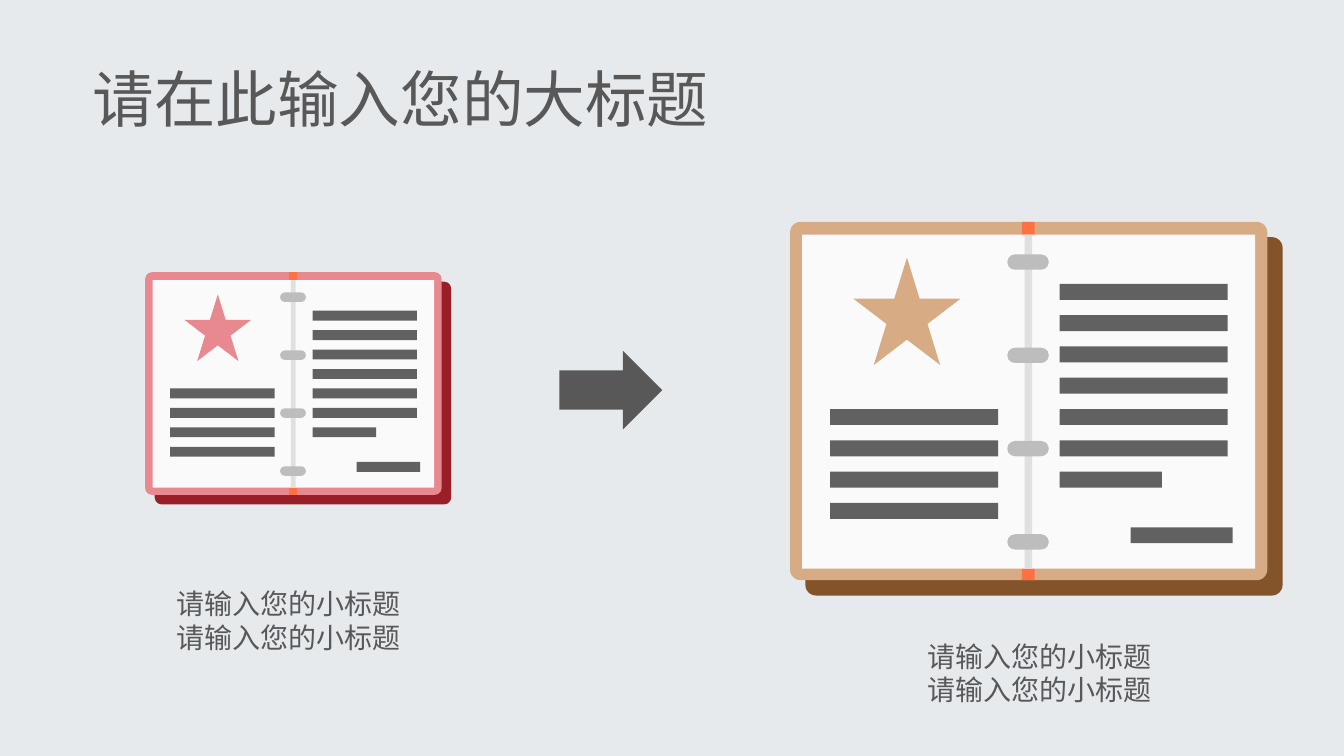
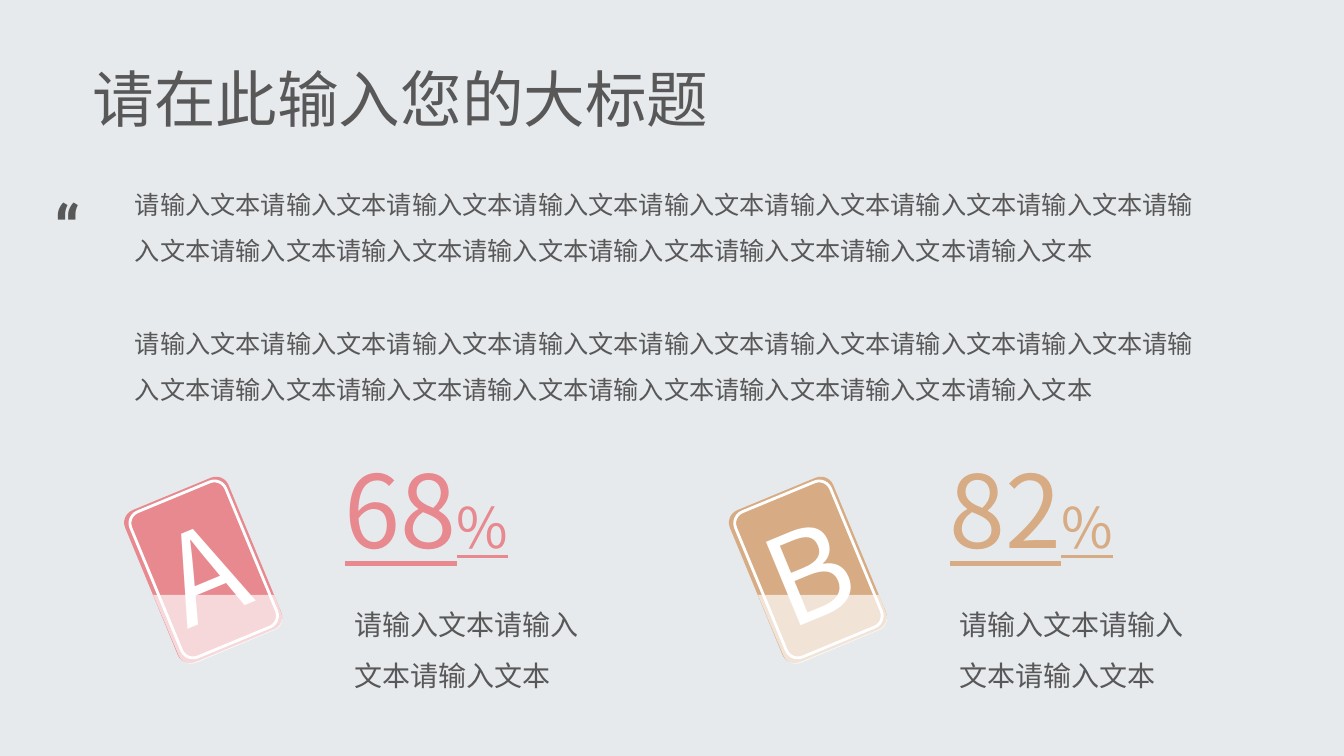
from dataclasses import dataclass

from lxml import etree
from pptx import Presentation
from pptx.dml.color import RGBColor
from pptx.enum.shapes import MSO_SHAPE
from pptx.enum.text import MSO_ANCHOR, MSO_AUTO_SIZE, PP_ALIGN
from pptx.oxml.ns import qn
from pptx.util import Cm, Pt

RECT, ROUNDED = MSO_SHAPE.RECTANGLE, MSO_SHAPE.ROUNDED_RECTANGLE
STAR, ARROW = MSO_SHAPE.STAR_5_POINT, MSO_SHAPE.RIGHT_ARROW
TOP, MIDDLE, BOTTOM = MSO_ANCHOR.TOP, MSO_ANCHOR.MIDDLE, MSO_ANCHOR.BOTTOM
LEFT, CENTER = PP_ALIGN.LEFT, PP_ALIGN.CENTER
NO_FIT = MSO_AUTO_SIZE.NONE
TITLE_ONLY = 5


@dataclass(frozen=True)
class Theme:
    background: str = "E7EAED"
    ink: str = "585858"
    white: str = "FFFFFF"
    rose: str = "E8888F"
    dark_red: str = "9A1E27"
    tan: str = "D7AB83"
    brown: str = "83542A"
    ribbon: str = "FF7043"
    paper: str = "FAFAFA"
    fold: str = "E0E0E0"
    ring: str = "BDBDBD"
    line: str = "616161"
    font: str = "Noto Sans CJK SC"
    letter_font: str = "Noto Sans CJK KR"
    quote_font: str = "Roboto Condensed"
    title_size: int = 44
    body_size: int = 18
    caption_size: int = 20
    quote_size: int = 48
    letter_size: int = 88
    figure_size: int = 72
    percent_size: int = 40


THEME = Theme()

TITLE = "请在此输入您的大标题"
TITLE_BOX = (2.08, 0.46, 29.67, 3.1)
SUBTITLE = "请输入您的小标题"
PHRASE = "请输入文本"

NOTEBOOKS = [
    dict(origin=(3.66, 6.86), scale=1, cover=THEME.rose, back=THEME.dark_red,
         caption=(1.57, 14.02, 11.4, 3.23)),
    dict(origin=(19.91, 5.59), scale=1.61, cover=THEME.tan, back=THEME.brown,
         caption=(20.5, 15.34, 11.4, 3.23)),
]
GROWTH_ARROW = (14.1, 8.84, 2.59, 1.98)

COVER_SIZE = (7.47, 5.61)
RING_TOP, RING_STEP, RING_COUNT = 0.51, 1.46, 4
LINE_TOP, LINE_STEP, LINE_HEIGHT = 0.97, 0.49, 0.25
LONG_LINE, SHORT_LINE = 2.63, 1.6
LEFT_PAGE, RIGHT_PAGE = 0.63, 4.22
WRITTEN_LINES = (
    [(LEFT_PAGE, row, LONG_LINE) for row in range(4, 8)]
    + [(RIGHT_PAGE, row, LONG_LINE) for row in range(6)]
    + [(RIGHT_PAGE, 6, SHORT_LINE)]
)
SIGNATURE = (5.33, 4.78, SHORT_LINE, LINE_HEIGHT)

QUOTE_BOX = (1.12, 4.6, 1.78, 2.31)
PARAGRAPH_BOXES = [(3.15, top, 27.56, 2.74) for top in (4.17, 7.67)]
CARDS = [("A", "68", THEME.rose), ("B", "82", THEME.tan)]
CARD_STEP = 15.24
CARD_TILT = 337.5
CARD_ROUNDING = 0.12
GLAZE_START = (3.86, 14.99)
GLAZE_CORNERS = [
    [(7.09, 15.44), (7.16, 15.62), (7.09, 15.82), (6.91, 15.88)],
    [(4.93, 16.71), (4.78, 16.76), (4.57, 16.69), (4.5, 16.51)],
]
GLAZE_RIGHT = (6.91, 14.99)
GLAZE_OPACITY = 68


def write(frame, paragraphs, size=THEME.caption_size, color=THEME.ink,
          font=THEME.font, align=LEFT, anchor=TOP, spacing=1.0, bold=False,
          underline=False, wrap=True, margin=None):
    frame.word_wrap = wrap
    frame.auto_size = NO_FIT
    frame.vertical_anchor = anchor
    if margin is not None:
        frame.margin_left = frame.margin_right = Cm(margin)
        frame.margin_top = frame.margin_bottom = Cm(margin)
    for index, pieces in enumerate(paragraphs):
        paragraph = frame.add_paragraph() if index else frame.paragraphs[0]
        paragraph.alignment = align
        paragraph.line_spacing = spacing
        for piece in [pieces] if isinstance(pieces, str) else pieces:
            words, points = (piece, size) if isinstance(piece, str) else piece
            run = paragraph.add_run()
            run.text = words
            run.font.size = Pt(points)
            run.font.bold = bold
            run.font.underline = underline
            run.font.color.rgb = RGBColor.from_string(color)
            run.font.name = font
            east_asian = etree.SubElement(run.font._element, qn("a:ea"))
            east_asian.set("typeface", font)


def add_text(slide, box, paragraphs, **text_format):
    label = slide.shapes.add_textbox(*map(Cm, box))
    write(label.text_frame, paragraphs, **text_format)


def paint(shape, fill=None, outline=None, width=2):
    shape.shadow.inherit = False
    if fill:
        shape.fill.solid()
        shape.fill.fore_color.rgb = RGBColor.from_string(fill)
    else:
        shape.fill.background()
    if outline:
        shape.line.color.rgb = RGBColor.from_string(outline)
        shape.line.width = Pt(width)
    else:
        shape.line.fill.background()
    return shape


def add_figure(shapes, preset, box, fill=None, outline=None, rounding=None, tilt=0):
    figure = paint(shapes.add_shape(preset, *map(Cm, box)), fill, outline)
    figure.rotation = tilt
    if rounding is not None:
        figure.adjustments[0] = rounding
    return figure


def add_titled_slide(deck):
    slide = deck.slides.add_slide(deck.slide_layouts[TITLE_ONLY])
    title = slide.shapes.title
    title.left, title.top, title.width, title.height = map(Cm, TITLE_BOX)
    write(title.text_frame, [TITLE], size=THEME.title_size, anchor=BOTTOM, spacing=0.9)
    return slide


def add_notebook(slide, origin, scale, cover, back, caption):
    group = slide.shapes.add_group_shape()

    def part(preset, box, fill, rounding=None):
        left, top, width, height = (value * scale for value in box)
        placed = (origin[0] + left, origin[1] + top, width, height)
        add_figure(group.shapes, preset, placed, fill, rounding=rounding)

    part(ROUNDED, (0.24, 0.24, *COVER_SIZE), back, 0.03)
    part(ROUNDED, (0, 0, *COVER_SIZE), cover, 0.03)
    part(RECT, (3.63, 0, 0.2, COVER_SIZE[1]), THEME.ribbon)
    part(RECT, (0.19, 0.2, 7.09, 5.23), THEME.paper)
    part(RECT, (3.67, 0.2, 0.12, 5.23), THEME.fold)
    for ring in range(RING_COUNT):
        part(ROUNDED, (3.4, RING_TOP + ring * RING_STEP, 0.65, 0.24), THEME.ring, 0.5)
    for left, row, width in WRITTEN_LINES:
        part(RECT, (left, LINE_TOP + row * LINE_STEP, width, LINE_HEIGHT), THEME.line)
    part(STAR, (0.99, 0.56, 1.68, 1.68), cover)
    part(RECT, SIGNATURE, THEME.line)
    add_text(slide, caption, [SUBTITLE] * 2, align=CENTER, anchor=MIDDLE)


def curve(a, b, c, d, steps=6):
    for step in range(steps + 1):
        t = step / steps
        weights = ((1 - t) ** 3, 3 * t * (1 - t) ** 2, 3 * t * t * (1 - t), t ** 3)
        yield tuple(sum(w * p[axis] for w, p in zip(weights, (a, b, c, d)))
                    for axis in (0, 1))


def add_glaze(slide, shift):
    outline = [GLAZE_RIGHT]
    for corner in GLAZE_CORNERS:
        outline.extend(curve(*corner))
    builder = slide.shapes.build_freeform(Cm(GLAZE_START[0] + shift), Cm(GLAZE_START[1]))
    builder.add_line_segments([(Cm(x + shift), Cm(y)) for x, y in outline])
    glaze = paint(builder.convert_to_shape(), THEME.white)
    color = glaze.fill._xPr.find(qn("a:solidFill"))[0]
    etree.SubElement(color, qn("a:alpha")).set("val", str(GLAZE_OPACITY * 1000))


def add_card(slide, shift, letter, figure, color):
    card = add_figure(slide.shapes, ROUNDED, (3.71 + shift, 12.29, 2.82, 4.14),
                      color, rounding=CARD_ROUNDING, tilt=CARD_TILT)
    write(card.text_frame, [letter], size=THEME.letter_size, color=THEME.white,
          font=THEME.letter_font, align=CENTER, anchor=MIDDLE)
    add_glaze(slide, shift)
    add_figure(slide.shapes, ROUNDED, (3.84 + shift, 12.37, 2.59, 3.96),
               outline=THEME.white, rounding=CARD_ROUNDING, tilt=CARD_TILT)
    add_text(slide, (8.69 + shift, 14.83, 6.22, 2.67), [PHRASE * 3],
             anchor=MIDDLE, spacing=1.5)
    add_text(slide, (8.69 + shift, 11.28, 5.72, 3.07),
             [[(figure, THEME.figure_size), ("%", THEME.percent_size)]],
             color=color, underline=True, margin=0)


def build_growth_slide(deck):
    slide = add_titled_slide(deck)
    for notebook in NOTEBOOKS:
        add_notebook(slide, **notebook)
    add_figure(slide.shapes, ARROW, GROWTH_ARROW, THEME.ink)


def build_cards_slide(deck):
    slide = add_titled_slide(deck)
    for index, card in enumerate(CARDS):
        add_card(slide, index * CARD_STEP, *card)
    for box in PARAGRAPH_BOXES:
        add_text(slide, box, [PHRASE * 16], size=THEME.body_size,
                 anchor=MIDDLE, spacing=1.5)
    add_text(slide, QUOTE_BOX, ["“"], size=THEME.quote_size,
             font=THEME.quote_font, bold=True)


def main():
    deck = Presentation()
    deck.slide_width, deck.slide_height = Cm(33.87), Cm(19.05)
    backdrop = deck.slide_master.background.fill
    backdrop.solid()
    backdrop.fore_color.rgb = RGBColor.from_string(THEME.background)
    build_growth_slide(deck)
    build_cards_slide(deck)
    deck.save("out.pptx")


if __name__ == "__main__":
    main()
